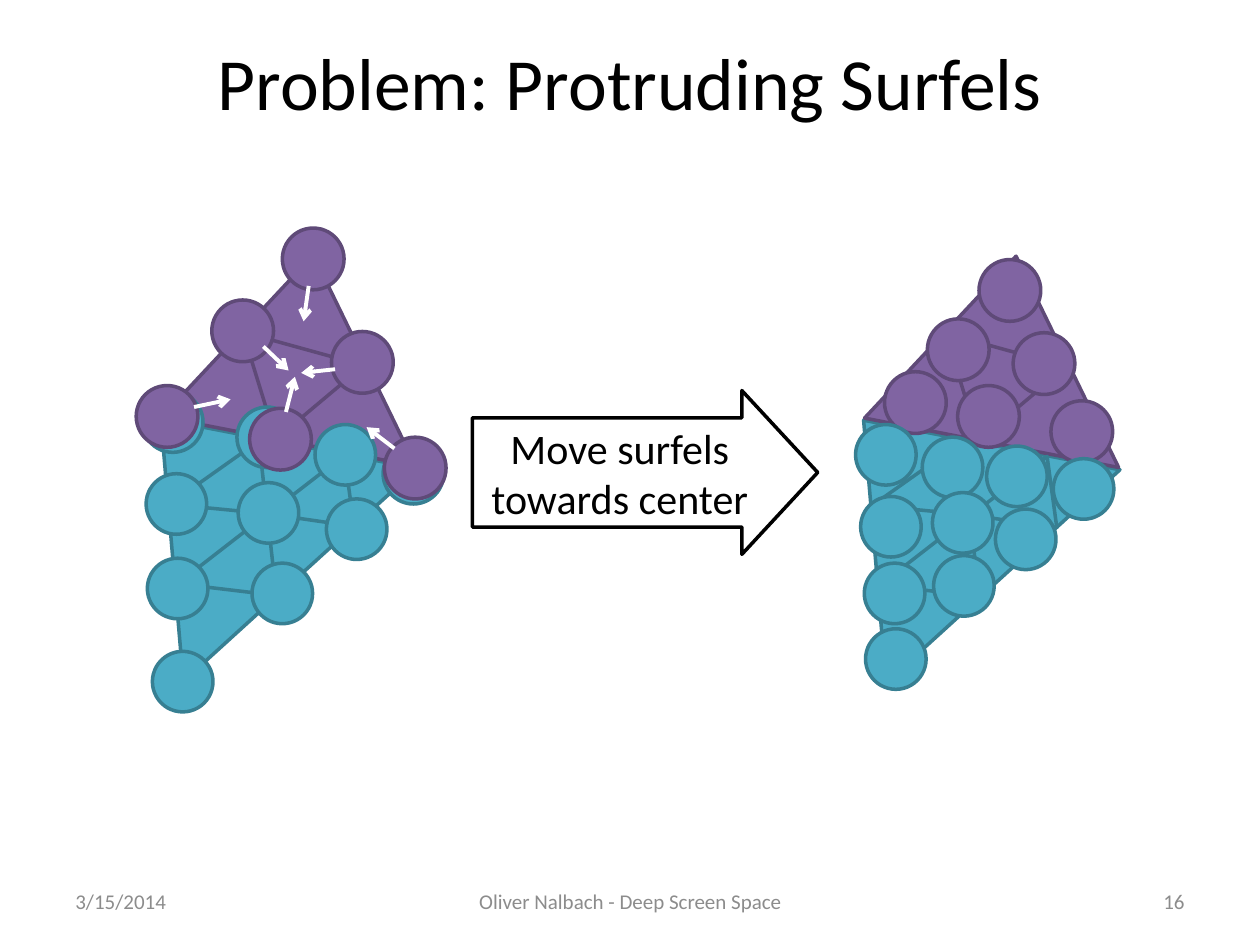
from dataclasses import dataclass

import lxml.etree
import pptx
import pptx.dml.color
import pptx.enum.shapes
import pptx.enum.text
import pptx.oxml.ns
import pptx.util

Pt = pptx.util.Pt
Kind = pptx.enum.shapes.MSO_SHAPE
Align = pptx.enum.text.PP_ALIGN
Anchor = pptx.enum.text.MSO_ANCHOR
FONT = "Calibri"
COLORS = {
    "teal": "4BACC6",
    "teal_edge": "377F92",
    "plum": "8064A2",
    "plum_edge": "5F4A78",
    "white": "FFFFFF",
    "black": "000000",
    "gray": "8C8C8C",
}
SIZES = {"teal": 34.6, "plum": 35.3}
TURN = 105


@dataclass
class Facet:
    left: float
    top: float
    width: float
    height: float
    turn: float
    peak: float
    color: str


@dataclass
class Patch:
    color: str
    spots: list[tuple[float, float]]


@dataclass
class Footer:
    text: str
    left: float
    width: float
    align: Align


FACETS = [
    Facet(41, 224.6, 180.7, 119.5, 317.7, 0.506, "teal"),
    Facet(118.1, 172.1, 126.7, 125.3, 133.1, 0.38, "plum"),
    Facet(131, 177.8, 65.5, 59, 320, 0.38, "plum"),
    Facet(102.2, 248.4, 41.8, 54.7, 263.7, 0.275, "teal"),
    Facet(155.5, 259.9, 41, 47.5, 262.2, 0.333, "teal"),
    Facet(104.4, 292.3, 46.8, 55.4, 263.7, 0.275, "teal"),
]
AFTER = [
    Patch("plum", [(559.4, 148.3), (529.9, 182.2), (505.4, 212.4),
                   (578.9, 190.1), (547.2, 220.3), (600.5, 229)]),
    Patch("teal", [(601.9, 262.1), (568.8, 290.9), (563.8, 254.9), (527, 249.8),
                   (488.9, 242.6), (532.8, 281.5), (533.5, 317.5),
                   (491.8, 283.7), (493.9, 321.8), (494.6, 359.3)]),
]
BEFORE = [
    Patch("teal", [(180, 242.6), (81.4, 223.9), (218.9, 253.4), (135.4, 232.6),
                   (186.5, 285.1), (136.1, 275.8), (144, 321.8),
                   (83.5, 270.7), (84.2, 319), (87.1, 372.2)]),
    Patch("plum", [(161.3, 130.3), (121, 171.4), (189.4, 189.4),
                   (142.6, 233.3), (219.6, 249.8), (77.8, 220.3)]),
]
MOVES = [
    (191.5, 211, 172.1, 213.1),
    (176.4, 163.4, 173.5, 183.6),
    (150.5, 198, 164.9, 211.7),
    (163.4, 235.4, 168.5, 215.3),
    (225.4, 256.3, 209.5, 244.1),
    (110.9, 232.6, 131.8, 228.2),
]
FOOTERS = [
    Footer("3/15/2014", 36, 167.8, Align.LEFT),
    Footer("Oliver Nalbach - Deep Screen Space", 246.2, 228.2, Align.CENTER),
    Footer("16", 516.2, 167.8, Align.RIGHT),
]


def paint(color: str) -> pptx.dml.color.RGBColor:
    return pptx.dml.color.RGBColor.from_string(COLORS[color])


def place(shape, left: float, top: float, width: float, height: float) -> None:
    shape.left, shape.top = Pt(left), Pt(top)
    shape.width, shape.height = Pt(width), Pt(height)


def write(shape, text: str, size: float, color: str, align: Align) -> None:
    frame = shape.text_frame
    frame.word_wrap = True
    frame.vertical_anchor = Anchor.MIDDLE
    frame.text = text
    line = frame.paragraphs[0]
    line.alignment = align
    line.font.name = FONT
    line.font.size = Pt(size)
    line.font.color.rgb = paint(color)


def add_form(shapes, kind: Kind, box: tuple, fill: str, edge: str, turn: float = 0):
    form = shapes.add_shape(kind, *map(Pt, box))
    form.rotation = turn
    form.shadow.inherit = False
    form.fill.solid()
    form.fill.fore_color.rgb = paint(fill)
    form.line.color.rgb = paint(edge)
    form.line.width = Pt(2)
    return form


def add_mesh(shapes, right: float, down: float) -> None:
    group = shapes.add_group_shape()
    for facet in FACETS:
        box = (facet.left + right, facet.top + down, facet.width, facet.height)
        form = add_form(group.shapes, Kind.ISOSCELES_TRIANGLE, box,
                        facet.color, facet.color + "_edge", facet.turn)
        form.adjustments[0] = facet.peak


def add_surfels(shapes, patches: list[Patch]) -> None:
    for patch in patches:
        size = SIZES[patch.color]
        for left, top in patch.spots:
            add_form(shapes, Kind.OVAL, (left, top, size, size),
                     patch.color, patch.color + "_edge", TURN)


def add_move(shapes, ends: tuple[float, float, float, float]) -> None:
    move = shapes.add_connector(pptx.enum.shapes.MSO_CONNECTOR.STRAIGHT, *map(Pt, ends))
    move.line.color.rgb = paint("white")
    move.line.width = Pt(2.25)
    name = pptx.oxml.ns.qn
    props = move._element.spPr
    tail = lxml.etree.SubElement(props.find(name("a:ln")), name("a:tailEnd"))
    tail.set("type", "arrow")
    lxml.etree.SubElement(props, name("a:effectLst"))


def add_footer(shapes, footer: Footer) -> None:
    box = shapes.add_textbox(Pt(footer.left), Pt(500.4), Pt(footer.width), Pt(28.8))
    write(box, footer.text, 12, "gray", footer.align)


def main() -> None:
    deck = pptx.Presentation()
    deck.slide_width, deck.slide_height = Pt(720), Pt(540)
    slide = deck.slides.add_slide(deck.slide_layouts.get_by_name("Title Only"))
    shapes = slide.shapes
    place(shapes.title, 36, 15.1, 648, 62.6)
    write(shapes.title, "Problem: Protruding Surfels", 42, "black", Align.CENTER)
    for footer in FOOTERS:
        add_footer(shapes, footer)
    add_mesh(shapes, 401.6, 0.7)
    add_surfels(shapes, AFTER)
    add_mesh(shapes, 0, 0)
    add_surfels(shapes, BEFORE)
    for ends in MOVES:
        add_move(shapes, ends)
    arrow = add_form(shapes, Kind.RIGHT_ARROW, (270, 223.2, 197.3, 93.6), "white", "black")
    arrow.adjustments[0] = 0.667
    arrow.adjustments[1] = 0.463
    write(arrow, "Move surfels towards center", 24, "black", Align.CENTER)
    deck.save("out.pptx")


if __name__ == "__main__":
    main()
